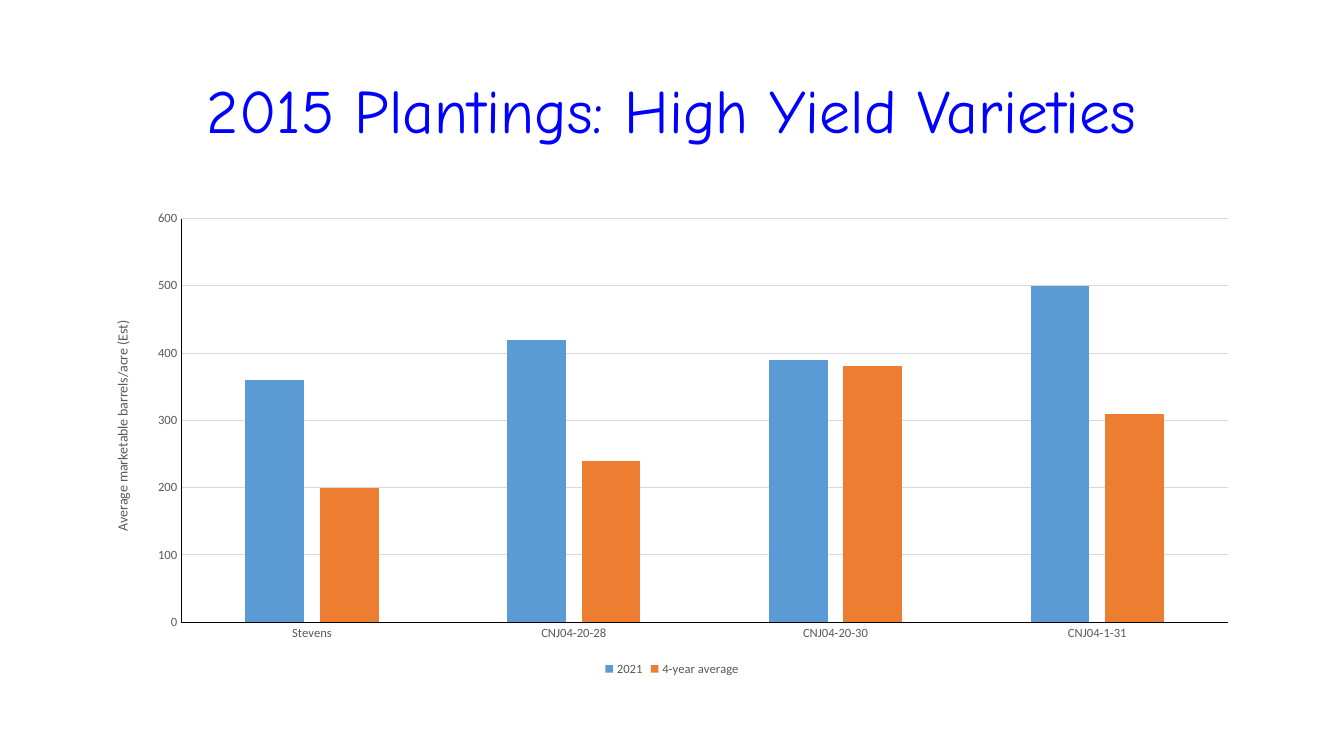
from pptx import Presentation
from pptx.chart.data import CategoryChartData
from pptx.dml.color import RGBColor
from pptx.enum.chart import XL_CHART_TYPE, XL_LEGEND_POSITION, XL_TICK_MARK
from pptx.enum.text import MSO_ANCHOR, MSO_AUTO_SIZE, PP_ALIGN
from pptx.util import Inches, Pt

COLORS = {
    "title": "0000FF",
    "text": "595959",
    "axis": "000000",
    "grid": "D9D9D9",
    "2021": "5B9BD5",
    "4-year average": "ED7D31",
}
WIDTH, HEIGHT = Inches(13.33), Inches(7.5)
MARGIN = Inches(0.92)
ROW = HEIGHT // 150
VARIETIES = ["Stevens", "CNJ04-20-28", "CNJ04-20-30", "CNJ04-1-31"]
YIELDS = {
    "2021": [360, 420, 390, 500],
    "4-year average": [200, 240, 380, 310],
}


def color(name):
    return RGBColor.from_string(COLORS[name])


def style_font(font, name, size, color_name):
    font.name = name
    font.size = Pt(size)
    font.bold = False
    font.color.rgb = color(color_name)


def style_line(line, color_name):
    line.color.rgb = color(color_name)
    line.width = Pt(0.75)


def place(first_row, rows):
    """Return the box of an element that spans the slide between its margins."""
    return MARGIN, first_row * ROW, WIDTH - 2 * MARGIN, rows * ROW


def add_title(slide, text):
    title = slide.shapes.title
    title.left, title.top, title.width, title.height = place(8, 29)
    frame = title.text_frame
    frame.word_wrap = True
    frame.auto_size = MSO_AUTO_SIZE.NONE
    frame.vertical_anchor = MSO_ANCHOR.MIDDLE
    paragraph = frame.paragraphs[0]
    paragraph.alignment = PP_ALIGN.CENTER
    paragraph.line_spacing = 0.9
    run = paragraph.add_run()
    run.text = text
    style_font(run.font, "Comic Neue", 44, "title")


def style_axis(axis):
    axis.major_tick_mark = XL_TICK_MARK.NONE
    axis.minor_tick_mark = XL_TICK_MARK.NONE
    style_font(axis.tick_labels.font, "Calibri", 9, "text")
    style_line(axis.format.line, "axis")


def style_value_axis(axis, title):
    axis.minimum_scale, axis.maximum_scale, axis.major_unit = 0, 600, 100
    axis.has_major_gridlines = True
    style_line(axis.major_gridlines.format.line, "grid")
    run = axis.axis_title.text_frame.paragraphs[0].add_run()
    run.text = title
    style_font(run.font, "Calibri", 10, "text")


def add_yield_chart(slide):
    data = CategoryChartData()
    data.categories = VARIETIES
    for name, values in YIELDS.items():
        data.add_series(name, values)
    chart = slide.shapes.add_chart(
        XL_CHART_TYPE.COLUMN_CLUSTERED, *place(40, 95), data
    ).chart
    chart.has_title = False
    style_font(chart.font, "Calibri", 10, "axis")

    style_axis(chart.category_axis)
    style_axis(chart.value_axis)
    style_value_axis(chart.value_axis, "Average marketable barrels/acre (Est)")

    plot = chart.plots[0]
    plot.gap_width, plot.overlap = 219, -27
    plot.vary_by_categories = False
    for series in plot.series:
        series.format.fill.solid()
        series.format.fill.fore_color.rgb = color(series.name)

    chart.has_legend = True
    chart.legend.position = XL_LEGEND_POSITION.BOTTOM
    chart.legend.include_in_layout = False
    style_font(chart.legend.font, "Calibri", 9, "text")


def main():
    presentation = Presentation()
    presentation.slide_width, presentation.slide_height = WIDTH, HEIGHT
    title_only = presentation.slide_layouts.get_by_name("Title Only")
    slide = presentation.slides.add_slide(title_only)
    add_title(slide, "2015 Plantings: High Yield Varieties")
    add_yield_chart(slide)
    presentation.save("out.pptx")


if __name__ == "__main__":
    main()
